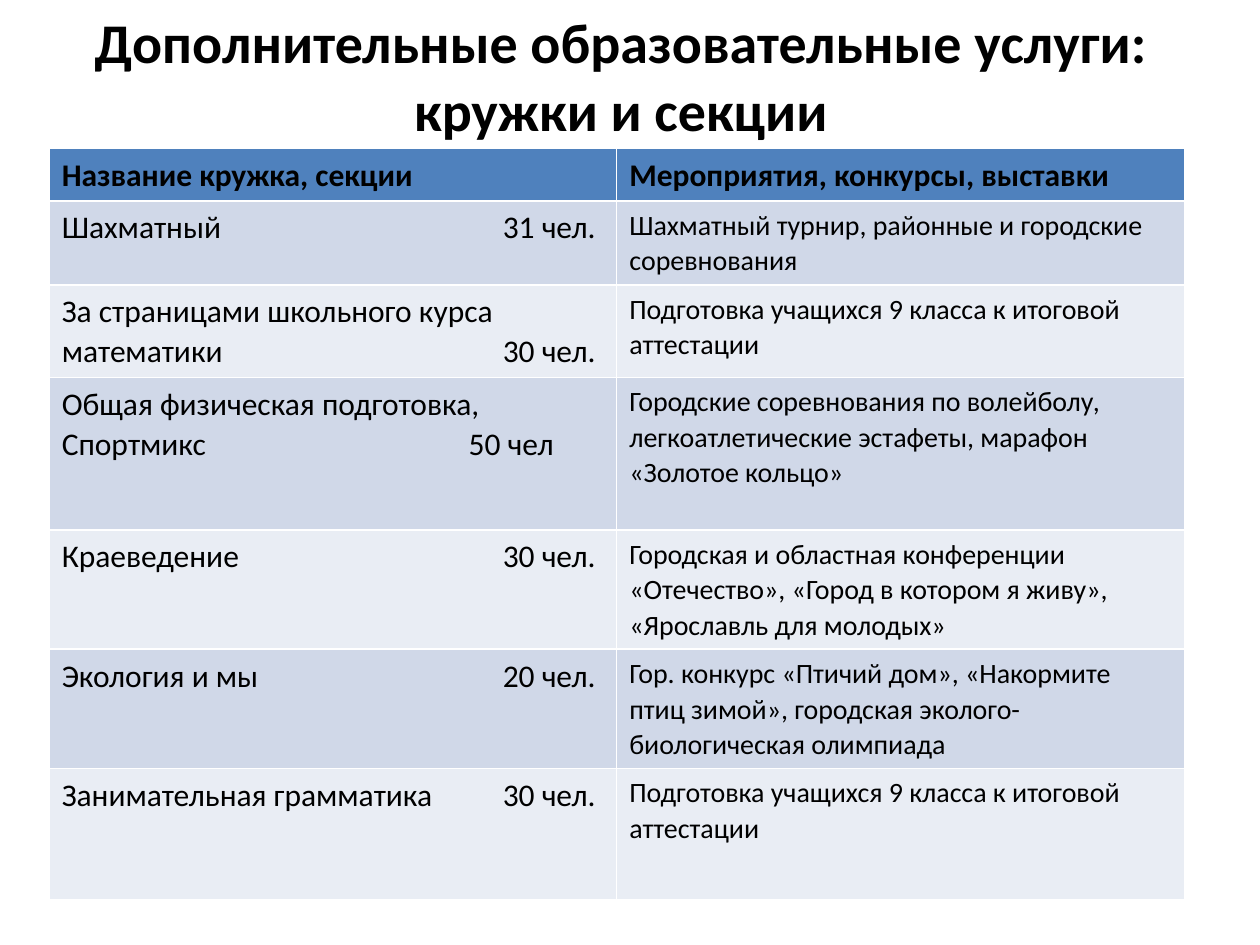
from dataclasses import dataclass

from lxml.etree import SubElement
from pptx import Presentation
from pptx.dml.color import RGBColor
from pptx.enum.text import MSO_ANCHOR, MSO_AUTO_SIZE, PP_ALIGN
from pptx.oxml.ns import qn
from pptx.table import _Cell
from pptx.text.text import _Paragraph
from pptx.util import Inches, Pt


@dataclass(frozen=True)
class Theme:
    font: str = "Calibri"
    text: str = "000000"
    header: str = "4F81BD"
    bands: tuple[str, str] = ("D0D8E8", "E9EDF4")
    title_size: int = 32
    club_size: int = 18
    event_size: int = 16
    line_spacing: float = 1.04


@dataclass(frozen=True)
class Box:
    left: float
    top: float
    width: float
    height: float

    def lengths(self) -> tuple[int, int, int, int]:
        return (
            Inches(self.left * SLIDE_W),
            Inches(self.top * SLIDE_H),
            Inches(self.width * SLIDE_W),
            Inches(self.height * SLIDE_H),
        )


@dataclass(frozen=True)
class Club:
    name: str
    members: str
    events: str
    height: float
    count_tab: float = 3.5


THEME = Theme()
SLIDE_W, SLIDE_H = 10, 7.5
TITLE_BOX = Box(0.043, -0.004, 0.9, 0.167)
TABLE_BOX = Box(0.039, 0.157, 0.901, 0.79)
HEADER_HEIGHT = 0.41
TITLE = "Дополнительные образовательные услуги: кружки и секции"
HEADERS = ("Название кружка, секции", "Мероприятия, конкурсы, выставки")
CLUBS = (
    Club("Шахматный", "31 чел.",
         "Шахматный турнир, районные и городские соревнования", 0.65),
    Club("За страницами школьного курса математики", "30 чел.",
         "Подготовка учащихся 9 класса к итоговой аттестации", 0.72),
    Club("Общая физическая подготовка, Спортмикс", "50 чел",
         "Городские соревнования по волейболу, легкоатлетические эстафеты, "
         "марафон «Золотое кольцо»", 1.21, 3.23),
    Club("Краеведение", "30 чел.",
         "Городская и областная конференции «Отечество», "
         "«Город в котором я живу», «Ярославль для молодых»", 0.93),
    Club("Экология и мы", "20 чел.",
         "Гор. конкурс «Птичий дом», «Накормите птиц зимой», "
         "городская эколого-биологическая олимпиада", 0.93),
    Club("Занимательная грамматика", "30 чел.",
         "Подготовка учащихся 9 класса к итоговой аттестации", 1.04),
)


def set_font(p: _Paragraph, size: int, bold: bool = False) -> None:
    p.font.name = THEME.font
    p.font.size = Pt(size)
    p.font.bold = bold
    p.font.color.rgb = RGBColor.from_string(THEME.text)


def add_tab(p: _Paragraph, position: float) -> None:
    tabs = SubElement(p._p.get_or_add_pPr(), qn("a:tabLst"))
    SubElement(tabs, qn("a:tab"), pos=str(Inches(position)), algn="l")


def fill_cell(cell: _Cell, text: str, fill: str, size: int,
              bold: bool = False, tab: float | None = None) -> None:
    cell.fill.solid()
    cell.fill.fore_color.rgb = RGBColor.from_string(fill)
    p = cell.text_frame.paragraphs[0]
    p.text = text
    p.line_spacing = THEME.line_spacing
    if tab is not None:
        add_tab(p, tab)
    set_font(p, size, bold)


def add_title(s) -> None:
    sp = s.shapes.title
    sp.left, sp.top, sp.width, sp.height = TITLE_BOX.lengths()
    tf = sp.text_frame
    tf.text = TITLE
    tf.word_wrap = True
    tf.auto_size = MSO_AUTO_SIZE.NONE
    tf.vertical_anchor = MSO_ANCHOR.MIDDLE
    p = tf.paragraphs[0]
    p.alignment = PP_ALIGN.CENTER
    set_font(p, THEME.title_size, bold=True)


def add_club_table(s) -> None:
    table = s.shapes.add_table(
        len(CLUBS) + 1, len(HEADERS), *TABLE_BOX.lengths()).table
    table.first_row = False
    table.horz_banding = False
    table.rows[0].height = Inches(HEADER_HEIGHT)
    for col, header in enumerate(HEADERS):
        fill_cell(table.cell(0, col), header, THEME.header,
                  THEME.club_size, bold=True)
    for row, club in enumerate(CLUBS, start=1):
        band = THEME.bands[(row - 1) % len(THEME.bands)]
        table.rows[row].height = Inches(club.height)
        fill_cell(table.cell(row, 0), f"{club.name}\t{club.members}", band,
                  THEME.club_size, tab=club.count_tab)
        fill_cell(table.cell(row, 1), club.events, band, THEME.event_size)


def main() -> None:
    prs = Presentation()
    prs.slide_width, prs.slide_height = Inches(SLIDE_W), Inches(SLIDE_H)
    s = prs.slides.add_slide(prs.slide_layouts.get_by_name("Title Only"))
    add_title(s)
    add_club_table(s)
    prs.save("out.pptx")


if __name__ == "__main__":
    main()
